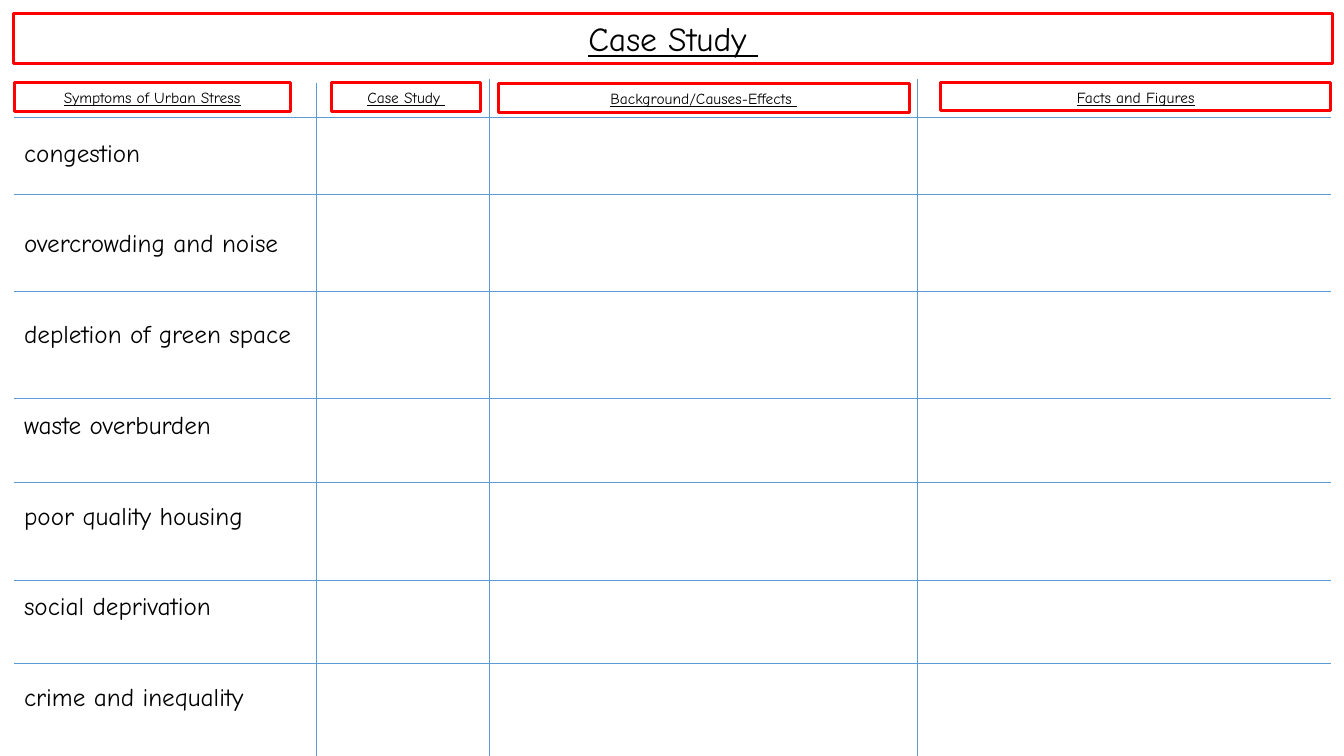
from lxml import etree
from pptx import Presentation
from pptx.dml.color import RGBColor
from pptx.enum.shapes import MSO_CONNECTOR
from pptx.enum.text import MSO_ANCHOR, PP_ALIGN
from pptx.oxml.ns import qn
from pptx.util import Inches, Pt

STRAIGHT = MSO_CONNECTOR.STRAIGHT
CENTER, LEFT = PP_ALIGN.CENTER, PP_ALIGN.LEFT
TOP = MSO_ANCHOR.TOP

# Content
TITLE = "Case Study "
HEADINGS = [  # text, (left, top, width, height)
    ("Symptoms of Urban Stress", (0.14, 0.82, 2.74, 0.29)),
    ("Case Study ", (3.29, 0.82, 1.48, 0.29)),
    ("Background/Causes-Effects ", (4.94, 0.83, 4.08, 0.29)),
    ("Facts and Figures", (9.33, 0.82, 3.87, 0.28)),
]
SYMPTOMS = [
    "congestion",
    "overcrowding and noise",
    "depletion of green space",
    "waste overburden",
    "poor quality housing",
    "social deprivation",
    "crime and inequality",
]

# Layout and style
SLIDE_WIDTH, SLIDE_HEIGHT = 13.33, 7.5
TITLE_BOX = (0.13, 0.13, 13.09, 0.5)
SYMPTOMS_BOX = (0.14, 1.31, 3.85, 5.86)
COLUMN_RULES = [(3.14, 0.82), (4.85, 0.78), (9.1, 0.78)]  # x, top
ROW_RULES = [1.16, 1.93, 2.89, 3.95, 4.79, 5.76, 6.58]
RULE_LEFT, RULE_RIGHT = 0.14, 13.2
SYMPTOM_GAP = 43.2  # two text lines, in points
FONT = "Comic Neue"
BLACK, RED, BLUE = "000000", "FF0000", "5B9BD5"


def color(hex_string):
    return RGBColor.from_string(hex_string)


def place(box, area):
    box.left, box.top, box.width, box.height = map(Inches, area)


def write(box, lines, size, align, underline=False, gap=0):
    frame = box.text_frame
    frame.word_wrap = True
    frame.vertical_anchor = TOP
    for index, line in enumerate(lines):
        paragraph = frame.add_paragraph() if index else frame.paragraphs[0]
        paragraph.alignment = align
        paragraph.line_spacing = 1.0
        paragraph.space_before = Pt(0)
        paragraph.space_after = Pt(gap)
        run = paragraph.add_run()
        run.text = line
        run.font.name = FONT
        run.font.size = Pt(size)
        run.font.underline = underline
        run.font.color.rgb = color(BLACK)


def outline(box):
    box.line.color.rgb = color(RED)
    box.line.width = Pt(2.25)


def add_rule(slide, x1, y1, x2, y2):
    rule = slide.shapes.add_connector(STRAIGHT, *map(Inches, (x1, y1, x2, y2)))
    rule.line.color.rgb = color(BLUE)
    rule.line.width = Pt(0.5)
    etree.SubElement(rule._element.spPr, qn("a:effectLst"))


def main():
    prs = Presentation()
    prs.slide_width, prs.slide_height = Inches(SLIDE_WIDTH), Inches(SLIDE_HEIGHT)
    slide = prs.slides.add_slide(prs.slide_layouts[5])

    # Title
    title = slide.shapes.title
    place(title, TITLE_BOX)
    outline(title)
    write(title, [TITLE], 24, CENTER, underline=True)

    # Symptom list
    symptoms = slide.shapes.add_textbox(*map(Inches, SYMPTOMS_BOX))
    write(symptoms, SYMPTOMS, 18, LEFT, gap=SYMPTOM_GAP)

    # Column headings
    for text, area in HEADINGS:
        heading = slide.shapes.add_textbox(*map(Inches, area))
        outline(heading)
        write(heading, [text], 11, CENTER, underline=True)

    # Grid rules
    for x, top in COLUMN_RULES:
        add_rule(slide, x, top, x, SLIDE_HEIGHT)
    for y in ROW_RULES:
        add_rule(slide, RULE_LEFT, y, RULE_RIGHT, y)

    prs.save("out.pptx")


if __name__ == "__main__":
    main()
